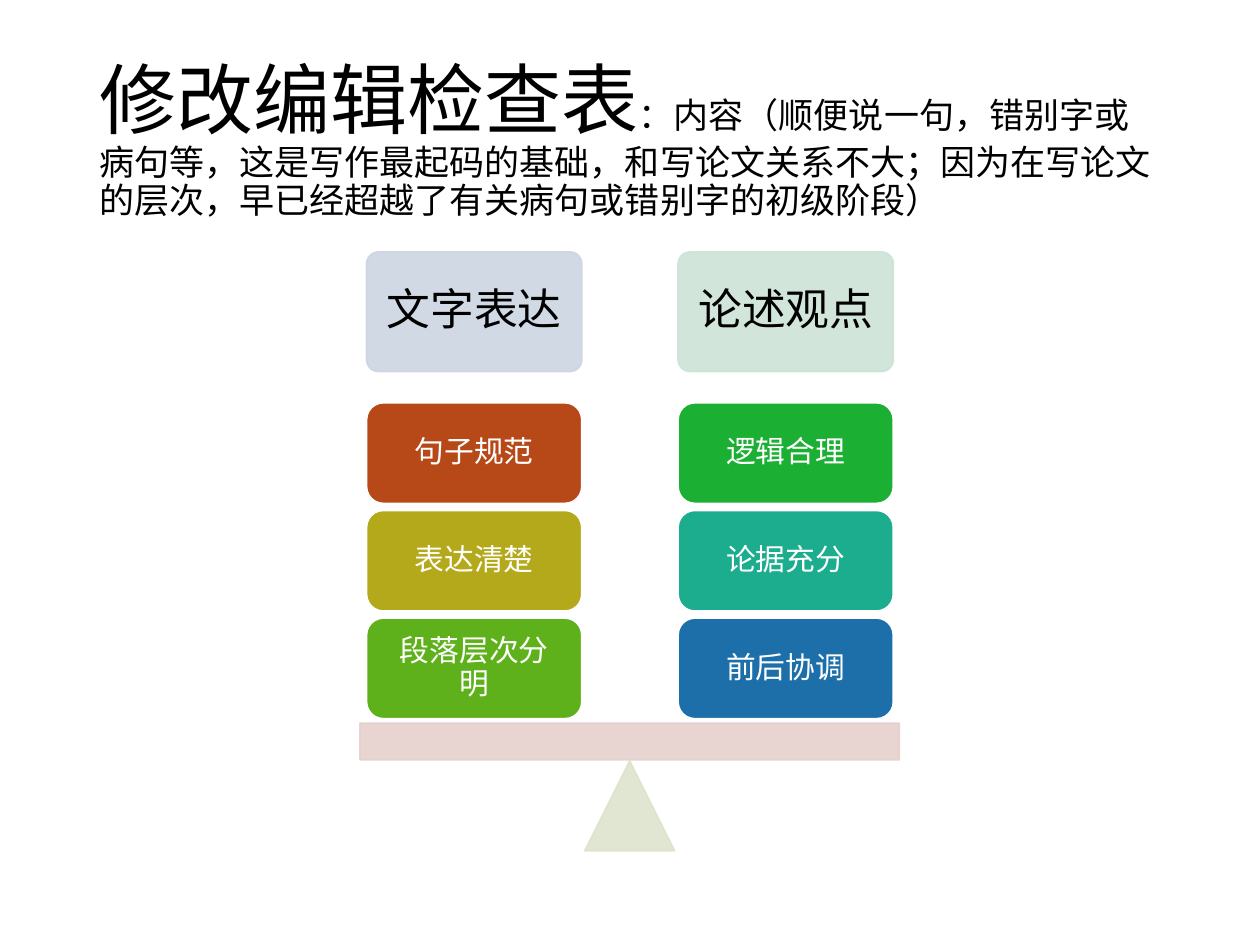
import pptx
import pptx.util
import pptx.dml.color
import pptx.enum.shapes
import pptx.enum.text
import pptx.oxml
import pptx.oxml.ns

Cm = pptx.util.Cm
Pt = pptx.util.Pt
SHAPES = pptx.enum.shapes.MSO_SHAPE
FONT = "Times New Roman"
COLOURS = {
    "black": "000000", "white": "FFFFFF",
    "wording": "CDD5E2", "argument": "CDE3D7",
    "fulcrum": "DDE4CC", "beam": "E6D0CC",
    "rust": "B74919", "olive": "B4A91A", "grass": "5FB11B",
    "green": "1BAF34", "teal": "1CAC8E", "blue": "1D6FA9",
}
TITLE = [
    ("修改编辑检查表", 44),
    ("：内容（顺便说一句，错别字或病句等，这是写作最起码的基础，和写论文关系不大；"
     "因为在写论文的层次，早已经超越了有关病句或错别字的初级阶段）", 20),
]
COLUMNS = [
    ("文字表达", "wording",
     [("句子规范", "rust"), ("表达清楚", "olive"), ("段落层次分明", "grass")]),
    ("论述观点", "argument",
     [("逻辑合理", "green"), ("论据充分", "teal"), ("前后协调", "blue")]),
]
COLUMN_LEFT, COLUMN_STEP, COLUMN_WIDTH = 7.39, 6.28, 4.34
HEADER_TOP, HEADER_HEIGHT = 5.08, 2.41
BLOCK_TOP, BLOCK_STEP, BLOCK_HEIGHT = 8.12, 2.17, 2.03


def rgb(name):
    return pptx.dml.color.RGBColor.from_string(COLOURS[name])


def style_span(span, size, colour):
    span.font.name = FONT
    span.font.size = Pt(size)
    span.font.color.rgb = rgb(colour)


def make_translucent(shape):
    for colour in shape._element.spPr.iter(pptx.oxml.ns.qn("a:srgbClr")):
        alpha = pptx.oxml.parse_xml(
            "<a:alpha %s val='90000'/>" % pptx.oxml.ns.nsdecls("a"))
        colour.append(alpha)


def add_figure(page, kind, place, fill, line):
    shape = page.shapes.add_shape(kind, *[Cm(length) for length in place])
    shape.shadow.inherit = False
    shape.fill.solid()
    shape.fill.fore_color.rgb = rgb(fill)
    shape.line.color.rgb = rgb(line)
    shape.line.width = Pt(1)
    return shape


def add_label(shape, text, size, colour, inset):
    frame = shape.text_frame
    frame.text = text
    frame.word_wrap = True
    frame.vertical_anchor = pptx.enum.text.MSO_ANCHOR.MIDDLE
    frame.margin_left = frame.margin_right = Cm(inset)
    frame.margin_top = frame.margin_bottom = Cm(inset)
    para = frame.paragraphs[0]
    para.alignment = pptx.enum.text.PP_ALIGN.CENTER
    para.line_spacing = 0.9
    style_span(para.runs[0], size, colour)


def add_title(page):
    box = page.shapes.add_textbox(Cm(1.75), Cm(1.02), Cm(21.9), Cm(3.68))
    frame = box.text_frame
    frame.word_wrap = True
    frame.vertical_anchor = pptx.enum.text.MSO_ANCHOR.MIDDLE
    para = frame.paragraphs[0]
    para.line_spacing = 0.9
    for text, size in TITLE:
        span = para.add_run()
        span.text = text
        style_span(span, size, "black")


def add_column(page, left, heading, tint, blocks):
    place = (left, HEADER_TOP, COLUMN_WIDTH, HEADER_HEIGHT)
    header = add_figure(page, SHAPES.ROUNDED_RECTANGLE, place, tint, tint)
    header.adjustments[0] = 0.1
    make_translucent(header)
    add_label(header, heading, 25, "black", 0.32)
    for row, (text, fill) in enumerate(blocks):
        place = (left, BLOCK_TOP + row * BLOCK_STEP, COLUMN_WIDTH, BLOCK_HEIGHT)
        block = add_figure(page, SHAPES.ROUNDED_RECTANGLE, place, fill, "white")
        add_label(block, text, 17, "white", 0.28)


def add_scale(page):
    parts = [
        (SHAPES.ISOSCELES_TRIANGLE, (11.79, 15.34, 1.81, 1.81), "fulcrum"),
        (SHAPES.RECTANGLE, (7.26, 14.58, 10.87, 0.74), "beam"),
    ]
    for kind, place, tint in parts:
        make_translucent(add_figure(page, kind, place, tint, tint))


def main():
    deck = pptx.Presentation()
    deck.slide_width, deck.slide_height = Cm(25.4), Cm(19.05)
    page = deck.slides.add_slide(deck.slide_layouts[6])
    add_title(page)
    add_scale(page)
    for index, column in enumerate(COLUMNS):
        add_column(page, COLUMN_LEFT + index * COLUMN_STEP, *column)
    deck.save("out.pptx")


if __name__ == "__main__":
    main()
